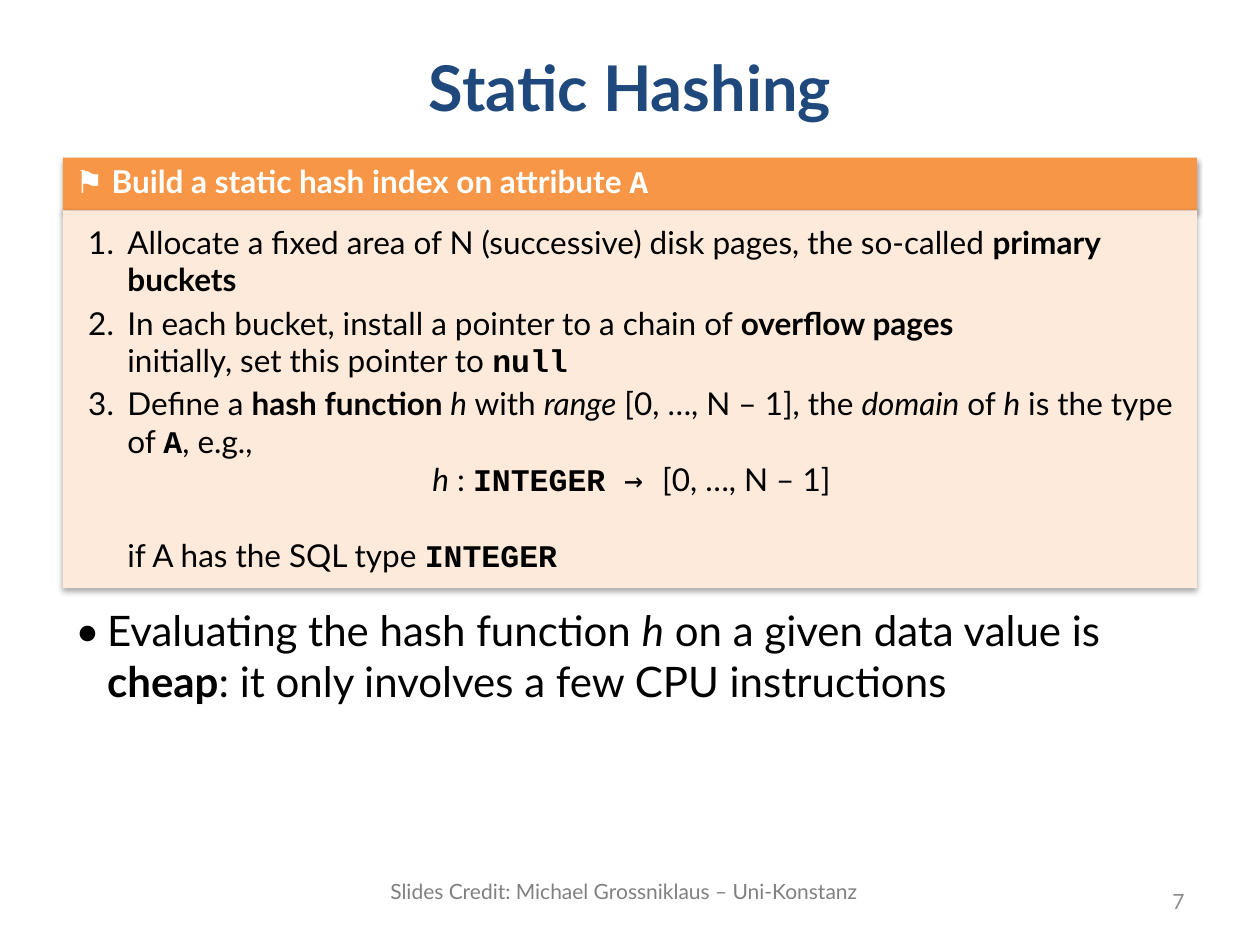
"""Build the slide on static hashing with its boxed index recipe."""
from lxml.etree import SubElement
from pptx import Presentation
from pptx.dml.color import RGBColor as Color
from pptx.enum.shapes import MSO_SHAPE as Preset
from pptx.enum.text import MSO_ANCHOR as Anchor, PP_ALIGN as Align
from pptx.oxml.ns import qn
from pptx.util import Cm, Pt

COLORS = {
    "title": "1F497D", "text": "000000", "header": "F79646", "panel": "FDEADA",
    "white": "FFFFFF", "number": "8C8C8C", "credit": "808080", "shadow": "000000",
}
STYLES = {
    "plain": {"name": "Lato"},
    "bold": {"name": "Lato", "bold": True},
    "italic": {"name": "Lato", "italic": True},
    "code": {"name": "Courier New", "bold": True},
    "symbol": {"name": "DejaVu Sans Mono"},
}

TITLE = [("Static Hashing", "bold")]
HEADER = [("⚑ ", "plain"), ("Build a static hash index on attribute ", "bold"), ("A", "code")]
STEPS = [
    [("Allocate a fixed area of N (successive) disk pages, the so-called ", "plain"),
     ("primary buckets", "bold")],
    [("In each bucket, install a pointer to a chain of ", "plain"),
     ("overflow pages\n", "bold"),
     ("initially, set this pointer to ", "plain"), ("null", "code")],
    [("Define a ", "plain"), ("hash function ", "bold"), ("h", "italic"),
     (" with ", "plain"), ("range", "italic"), (" [0, …, N – 1], the ", "plain"),
     ("domain", "italic"), (" of ", "plain"), ("h", "italic"),
     (" is the type of ", "plain"), ("A", "code"), (", e.g.,\n\t", "plain"),
     ("h", "italic"), (" : ", "plain"), ("INTEGER ", "code"), ("→ ", "symbol"),
     ("[0, …, N – 1]\n\nif A has the SQL type ", "plain"), ("INTEGER", "code")],
]
STEP_TABS = [(4.45, "l"), (4.45, "l"), (10.95, "ctr")]
RIGHT_TAB = 22.07
REMARK = [
    ("Evaluating the hash function ", "plain"), ("h", "italic"),
    (" on a given data value is ", "plain"), ("cheap", "bold"),
    (": it only involves a few CPU instructions", "plain"),
]
NUMBER = [("7", "plain")]
CREDIT = [("Slides Credit: Michael Grossniklaus – Uni-Konstanz", "plain")]

LEFT, WIDTH = 1.27, 22.86
HEADER_TOP, HEADER_HEIGHT, PANEL_HEIGHT = 3.18, 1.06, 7.62


def write_runs(paragraph, runs, size, color):
    for text, style in runs:
        for index, piece in enumerate(text.split("\n")):
            if index:
                paragraph.add_line_break()
            if not piece:
                continue
            run = paragraph.add_run()
            run.text = piece
            values = {"size": Pt(size), "bold": False, "italic": False, **STYLES[style]}
            for name, value in values.items():
                setattr(run.font, name, value)
            run.font.color.rgb = Color.from_string(COLORS[color])


def add_bullet(paragraph, indent, tag, attributes, tabs=()):
    properties = paragraph._p.get_or_add_pPr()
    properties.set("marL", str(Cm(indent)))
    properties.set("indent", str(-Cm(indent)))
    SubElement(properties, qn("a:buFont"), typeface="Lato")
    SubElement(properties, qn(tag), attributes)
    if tabs:
        tab_list = SubElement(properties, qn("a:tabLst"))
        for position, alignment in tabs:
            SubElement(tab_list, qn("a:tab"), pos=str(Cm(position)), algn=alignment)


def format_frame(frame, **values):
    for name, value in {"word_wrap": True, **values}.items():
        setattr(frame, name, value)


def add_text(slide, box, runs, size, color, align=Align.LEFT, anchor=Anchor.TOP):
    frame = slide.shapes.add_textbox(*map(Cm, box)).text_frame
    format_frame(frame, vertical_anchor=anchor)
    paragraph = frame.paragraphs[0]
    paragraph.alignment = align
    write_runs(paragraph, runs, size, color)
    return paragraph


def add_panel(slide, top, height, fill, **frame_values):
    shape = slide.shapes.add_shape(Preset.RECTANGLE, Cm(LEFT), Cm(top), Cm(WIDTH), Cm(height))
    shape.fill.solid()
    shape.fill.fore_color.rgb = Color.from_string(COLORS[fill])
    shape.line.fill.background()
    shape.shadow.inherit = False
    effects = shape._element.spPr.find(qn("a:effectLst"))
    shadow = SubElement(effects, qn("a:outerShdw"), blurRad=str(Pt(3.1)),
                        dist=str(Pt(1.8)), dir="5400000", rotWithShape="0")
    shade = SubElement(shadow, qn("a:srgbClr"), val=COLORS["shadow"])
    SubElement(shade, qn("a:alpha"), val="35000")
    format_frame(shape.text_frame, **frame_values)
    return shape.text_frame


def main():
    presentation = Presentation()
    presentation.slide_width, presentation.slide_height = Cm(25.4), Cm(19.05)
    slide = presentation.slides.add_slide(presentation.slide_layouts[6])

    add_text(slide, (LEFT, 0.76, WIDTH, 1.98), TITLE, 36, "title", Align.CENTER, Anchor.MIDDLE)
    remark = add_text(slide, (LEFT, 12.07, WIDTH, 5.92), REMARK, 24, "text")
    add_bullet(remark, 0.64, "a:buChar", {"char": "•"})
    add_text(slide, (18.2, 17.65, 5.93, 1.02), NUMBER, 12, "number", Align.RIGHT, Anchor.MIDDLE)

    header = add_panel(slide, HEADER_TOP, HEADER_HEIGHT, "header", margin_top=0,
                       vertical_anchor=Anchor.MIDDLE)
    header.paragraphs[0].alignment = Align.LEFT
    write_runs(header.paragraphs[0], HEADER, 18, "white")

    panel = add_panel(slide, HEADER_TOP + HEADER_HEIGHT, PANEL_HEIGHT, "panel",
                      margin_left=Cm(0.51), margin_top=Cm(0.25), vertical_anchor=Anchor.TOP)
    for index, (runs, tab) in enumerate(zip(STEPS, STEP_TABS)):
        paragraph = panel.add_paragraph() if index else panel.paragraphs[0]
        paragraph.alignment = Align.LEFT
        paragraph.space_before = Pt(3)
        add_bullet(paragraph, 0.79, "a:buAutoNum", {"type": "arabicPeriod"},
                   [tab, (RIGHT_TAB, "r")])
        write_runs(paragraph, runs, 18, "text")

    add_text(slide, (7.62, 17.58, 10.36, 0.76), CREDIT, 12, "credit")
    presentation.save("out.pptx")


if __name__ == "__main__":
    main()
